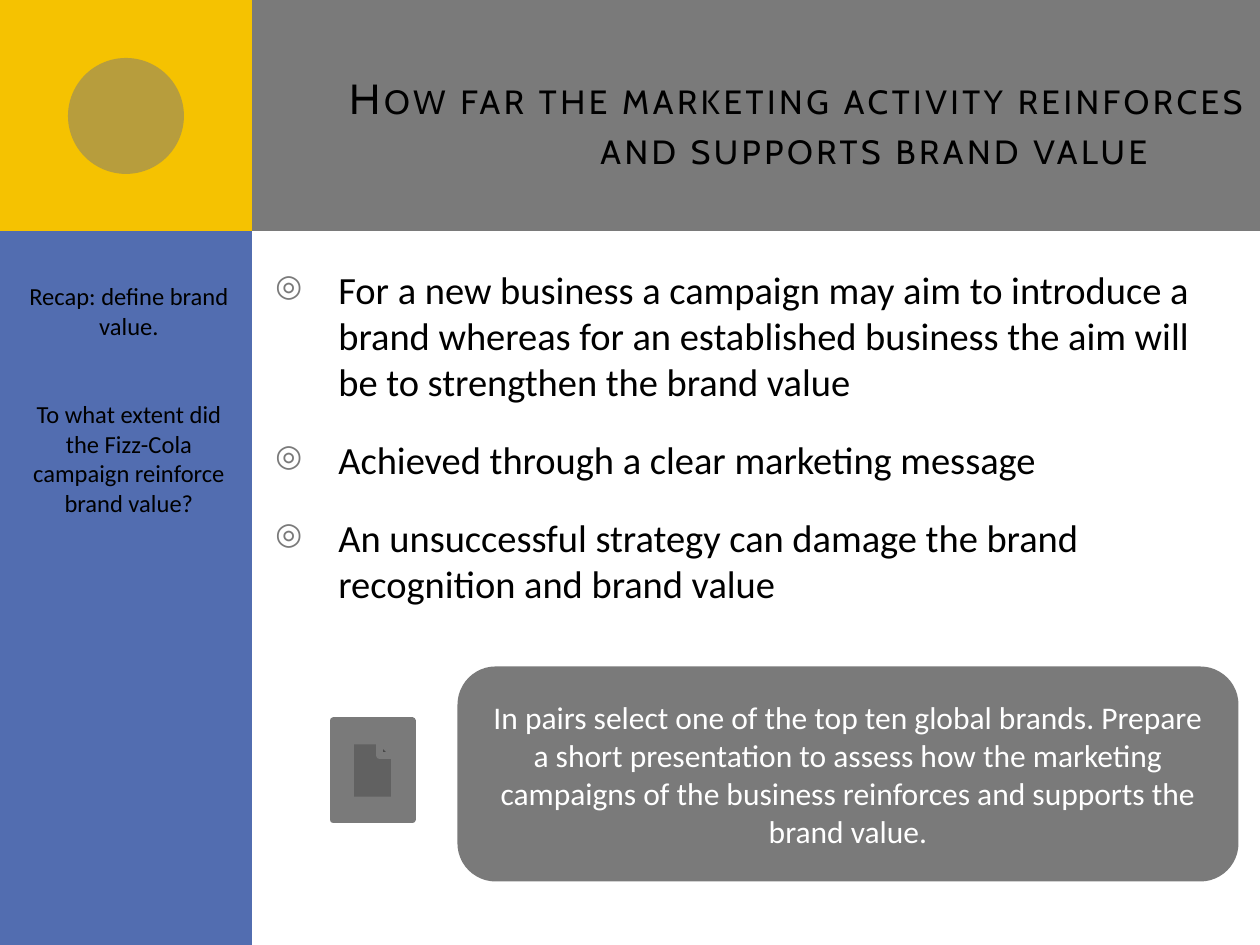
from lxml import etree
from pptx import Presentation
from pptx.dml.color import RGBColor
from pptx.enum.shapes import MSO_SHAPE
from pptx.enum.text import MSO_ANCHOR, MSO_AUTO_SIZE, PP_ALIGN
from pptx.oxml.ns import qn
from pptx.util import Pt

RECT, OVAL = MSO_SHAPE.RECTANGLE, MSO_SHAPE.OVAL
ROUND, DOC = MSO_SHAPE.ROUNDED_RECTANGLE, MSO_SHAPE.ACTION_BUTTON_DOCUMENT
TOP, MID = MSO_ANCHOR.TOP, MSO_ANCHOR.MIDDLE
LEFT, MIDDLE, RIGHT = PP_ALIGN.LEFT, PP_ALIGN.CENTER, PP_ALIGN.RIGHT
NO_FIT = MSO_AUTO_SIZE.NONE
SCALE = 914400 / 126
WIDE, HIGH, SIDE, BAND = 1260, 945, 252, 231

HEX = {"gray": "7A7A7A", "blue": "526DB0", "gold": "F5C201",
       "black": "000000", "white": "FFFFFF"}

TITLE = "How far the marketing activity reinforces and supports brand value "
POINTS = [
    "For a new business a campaign may aim to introduce a brand whereas "
    "for an established business the aim will be to strengthen the brand value",
    "Achieved through a clear marketing message",
    "An unsuccessful strategy can damage the brand recognition and brand value",
]
RECAP = [
    "Recap: define brand value.",
    "To what extent did the Fizz-Cola campaign reinforce brand value?",
]
TASK = ["In pairs select one of the top ten global brands. Prepare a short "
        "presentation to assess how the marketing campaigns of the business "
        "reinforces and supports the brand value."]

PANELS = [
    (RECT, (63, 0, WIDE - 63, BAND), "gray"),
    (RECT, (0, 0, SIDE, HIGH), "blue"),
    (RECT, (0, 0, SIDE, BAND), "gold"),
]
DOT = (68, 58, 116, 116)
BOXES = {"title": (281, 11, 978, 223), "points": (263, 260, 983, 529),
         "recap": (15, 275, 228, 251), "task": (461, 670, 774, 208),
         "button": (333, 721, 79, 99)}


def emu(box):
    """Turn px lengths into EMU."""
    return [round(n * SCALE) for n in box]


def color(name):
    """Look up a colour by name."""
    return RGBColor.from_string(HEX[name])


def assign(item, **values):
    """Set each attribute from the given values."""
    for key, value in values.items():
        setattr(item, key, value)


def node(parent, tag, **attrs):
    """Add a drawing element with attributes."""
    return etree.SubElement(parent, qn("a:" + tag), attrs)


def draw(slide, kind, box, fill, edge=0):
    """Add a flat filled shape, with an outline if edge is given."""
    shape = slide.shapes.add_shape(kind, *emu(box))
    shape.shadow.inherit = False
    shape.fill.solid()
    shape.fill.fore_color.rgb = color(fill)
    if edge:
        shape.line.width = Pt(edge)
        shape.line.color.rgb = color(fill)
    else:
        shape.line.fill.background()
    return shape


def write(shape, lines, size, ink="black", face="Calibri", align=MIDDLE,
          anchor=TOP, gap=0, first=0):
    """Fill a shape with formatted paragraphs and return them."""
    frame = shape.text_frame
    frame.text = "\n".join(lines)
    assign(frame, word_wrap=True, auto_size=NO_FIT, vertical_anchor=anchor)
    for i, para in enumerate(frame.paragraphs):
        assign(para, alignment=align, space_before=Pt(gap if i else first))
        font = para.runs[0].font
        assign(font, name=face, size=Pt(size))
        font.color.rgb = color(ink)
    return frame.paragraphs


def bullet(para):
    """Give a paragraph a hanging ring bullet."""
    props = para._p.get_or_add_pPr()
    props.set("marL", "457200")
    props.set("indent", "-457200")
    node(node(props, "buClr"), "srgbClr", val=HEX["gray"])
    node(props, "buSzPct", val="80000")
    node(props, "buChar", char="◎")


def main():
    """Build the brand value slide."""
    deck = Presentation()
    deck.slide_width, deck.slide_height = emu((WIDE, HIGH))
    slide = deck.slides.add_slide(deck.slide_layouts[5])

    for kind, box, fill in PANELS:
        draw(slide, kind, box, fill)
    dot = draw(slide, OVAL, DOT, "gray")
    tint = dot._element.spPr.find(".//" + qn("a:srgbClr"))
    node(tint, "alpha", val="50000")

    area = slide.shapes.add_textbox(*emu(BOXES["points"]))
    for para in write(area, POINTS, 22, align=LEFT, gap=18, first=18):
        bullet(para)
    recap = slide.shapes.add_textbox(*emu(BOXES["recap"]))
    write(recap, RECAP, 14, gap=34)
    task = draw(slide, ROUND, BOXES["task"], "gray", 4)
    write(task, TASK, 18, ink="white", anchor=MID)
    draw(slide, DOC, BOXES["button"], "gray", 4)

    title = slide.shapes.title
    spot = zip(("left", "top", "width", "height"), emu(BOXES["title"]))
    assign(title, **dict(spot))
    head = write(title, [TITLE], 24, face="Cabin", align=RIGHT, anchor=MID)
    props = head[0].runs[0].font._element
    props.set("spc", "200")
    props.set("cap", "small")
    slide.shapes._spTree.append(title._element)

    deck.save("out.pptx")


if __name__ == "__main__":
    main()
